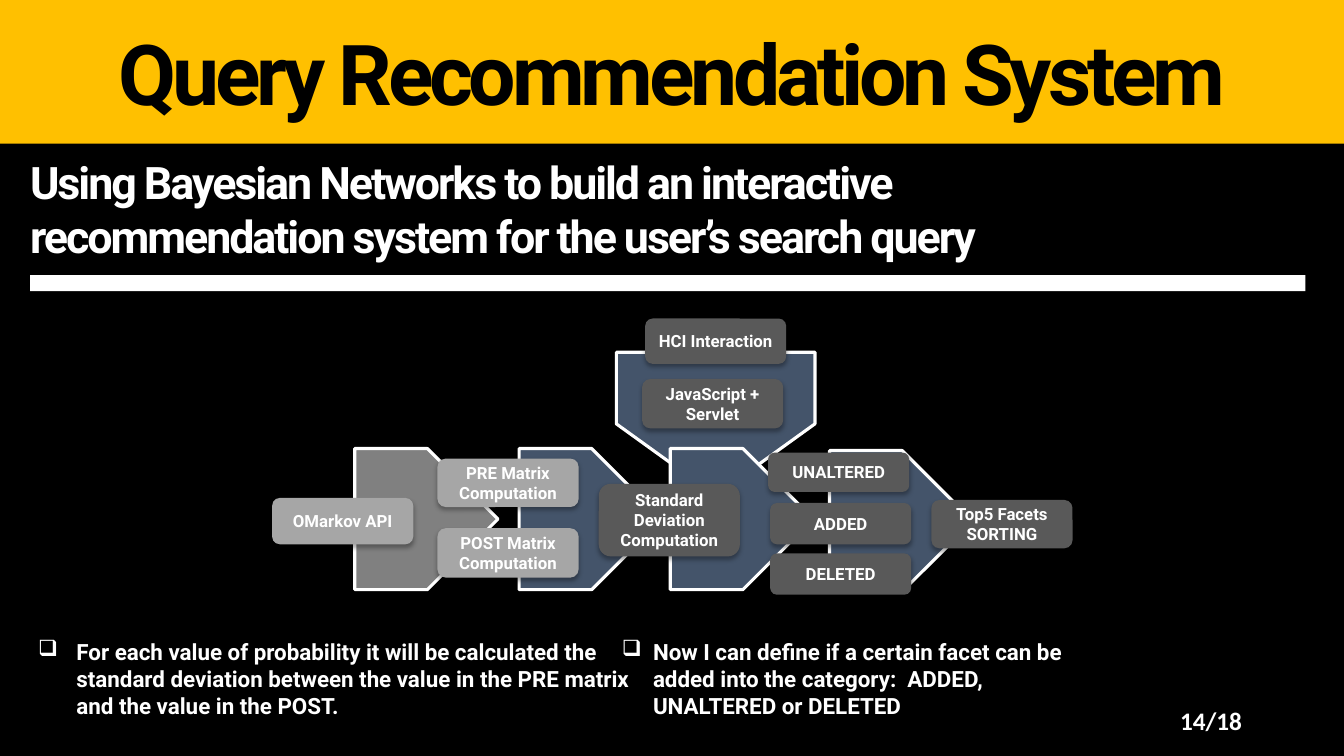
from lxml import etree
from pptx import Presentation
from pptx.dml.color import RGBColor as RGB
from pptx.enum.shapes import MSO_SHAPE as SHAPE
from pptx.enum.text import MSO_ANCHOR as ANCHOR, PP_ALIGN as ALIGN
from pptx.oxml import parse_xml
from pptx.oxml.ns import qn
from pptx.util import Inches, Pt

THEME = dict(
    yellow="FFC000", black="000000", white="FFFFFF", blue="44546A",
    gray="808080", light="A6A6A6", dark="595959",
    title=60, subtitle=32, page=18, note=16, step=12,
    font="Roboto", page_font="Calibri",
)
SHADOW = (
    '<a:outerShdw xmlns:a="http://schemas.openxmlformats.org/drawingml/2006/main"'
    ' blurRad="44450" dist="27940" dir="5400000" algn="ctr">'
    '<a:srgbClr val="000000"><a:alpha val="32000"/></a:srgbClr></a:outerShdw>'
)

prs = Presentation()
prs.slide_width, prs.slide_height = Inches(13.33), Inches(7.5)
s = prs.slides.add_slide(prs.slide_layouts[6])

# Grid of 40 columns by 30 rows
COL, ROW = prs.slide_width / 40, prs.slide_height / 30


def add_box(x, y, w, h, fill=None, kind=SHAPE.RECTANGLE):
    """Place a filled shape, or a text box when there is no fill."""
    place = int(x * COL), int(y * ROW), int(w * COL), int(h * ROW)
    if fill is None:
        return s.shapes.add_textbox(*place)
    sp = s.shapes.add_shape(kind, *place)
    sp.fill.solid()
    sp.fill.fore_color.rgb = RGB.from_string(THEME[fill])
    sp.line.fill.background()
    sp.shadow.inherit = False
    return sp


def write(sp, text, size, color="white", font="font", align=ALIGN.LEFT,
          anchor=ANCHOR.TOP, spacing=0):
    tf = sp.text_frame
    tf.word_wrap = True
    tf.vertical_anchor = anchor
    tf.text = text
    p = tf.paragraphs[0]
    p.alignment = align
    r = p.runs[0]
    r.font.name = THEME[font]
    r.font.size = Pt(THEME[size])
    r.font.bold = True
    r.font.color.rgb = RGB.from_string(THEME[color])
    if spacing:
        r.font._element.set("spc", str(spacing))
    return p


# Header, background and subtitle
banner = add_box(0, 0, 40, 5.72, "yellow")
write(banner, "Query Recommendation System", "title", "black",
      align=ALIGN.CENTER, anchor=ANCHOR.MIDDLE, spacing=-300)
add_box(0, 5.7, 40, 24.3, "black")
write(add_box(0.6, 5.96, 33.18, 4.72),
      "Using Bayesian Networks to build an interactive recommendation system "
      "for the user’s search query", "subtitle", spacing=-150)
write(add_box(28.26, 27.8, 9, 1.6), "14/18", "page", font="page_font",
      align=ALIGN.RIGHT, anchor=ANCHOR.MIDDLE)
add_box(0.9, 10.92, 37.95, 0.64, "white")

# Process arrows: x, y, height, fill, rotation
ARROWS = [
    (19.17, 12.88, 7.88, "blue", 90),
    (15.45, 17.8, 5.6, "blue", 0),
    (19.95, 17.8, 5.6, "blue", 0),
    (10.56, 17.8, 5.6, "gray", 0),
    (24.69, 17.88, 5.6, "blue", 0),
]
for x, y, h, fill, rotation in ARROWS:
    arrow = add_box(x, y, 4.26, h, fill, SHAPE.PENTAGON)
    arrow.rotation = rotation
    arrow.line.color.rgb = RGB.from_string(THEME["white"])
    arrow.line.width = Pt(2.25)

# Step labels: text, x, y, height, fill
STEPS = [
    ("HCI Interaction", 19.2, 12.64, 1.8, "dark"),
    ("JavaScript + Servlet", 19.11, 15.04, 1.96, "dark"),
    ("OMarkov API", 8.1, 19.76, 1.84, "light"),
    ("PRE Matrix Computation", 13.02, 18.2, 1.92, "light"),
    ("POST Matrix Computation", 13.02, 20.96, 1.96, "light"),
    ("Standard Deviation Computation", 17.82, 19.2, 2.88, "dark"),
    ("UNALTERED", 22.86, 17.96, 1.56, "dark"),
    ("ADDED", 22.92, 19.96, 1.64, "dark"),
    ("DELETED", 22.92, 21.96, 1.64, "dark"),
    ("Top5 Facets SORTING", 27.72, 19.84, 1.92, "dark"),
]
for text, x, y, h, fill in STEPS:
    step = add_box(x, y, 4.2, h, fill, SHAPE.ROUNDED_RECTANGLE)
    step._element.spPr.find(qn("a:effectLst")).append(parse_xml(SHADOW))
    write(step, text, "step", align=ALIGN.CENTER, anchor=ANCHOR.MIDDLE)

# Bulleted notes: text, x, width, indent in inches
NOTES = [
    ("For each value of probability it will be calculated the standard deviation "
     "between the value in the PRE matrix and the value in the POST.",
     0.84, 18.24, 0.38),
    ("Now I can define if a certain facet can be added into the category:  ADDED, "
     "UNALTERED or DELETED", 18.21, 13.89, 0.31),
]
for text, x, w, indent in NOTES:
    p = write(add_box(x, 25.12, w, 3.64), text, "note")
    pPr = p._element.get_or_add_pPr()
    pPr.set("marL", str(Inches(indent)))
    pPr.set("indent", str(-Inches(indent)))
    etree.SubElement(pPr, qn("a:buChar")).set("char", "❑")

prs.save("out.pptx")
